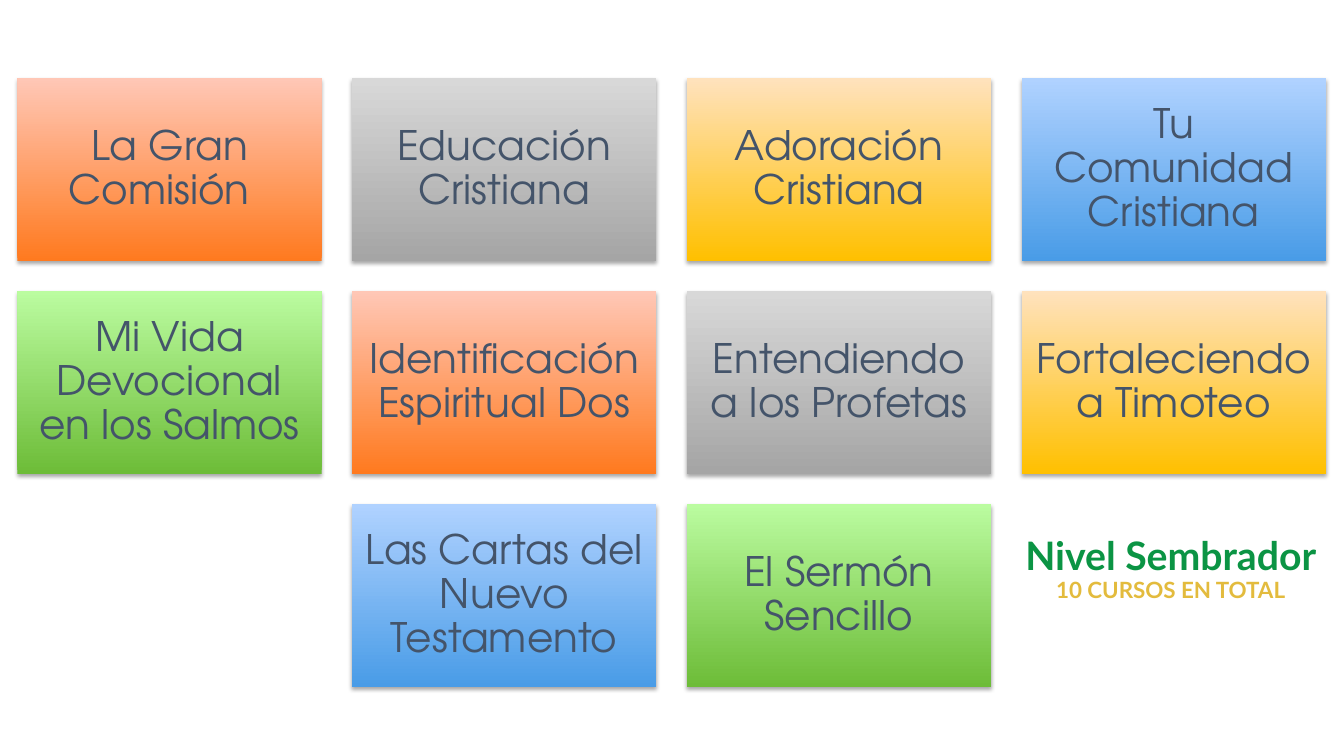
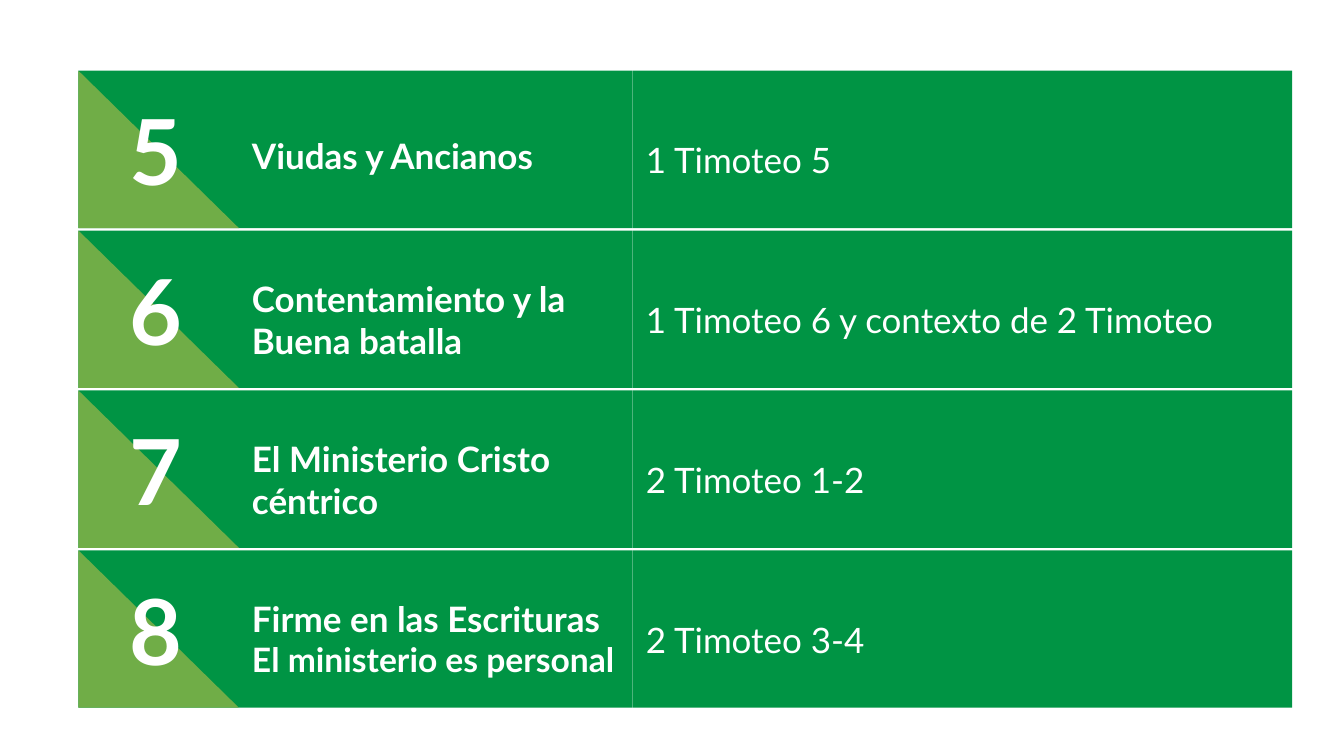
from pptx import Presentation
from pptx import util as u
from pptx.dml import color
from pptx.enum import shapes, text
from pptx.oxml import parse_xml
from pptx.oxml import ns

# Shared look
COLORS = {
    "white": "FFFFFF", "slate": "44546A", "band": "009444", "corner": "70AD47",
    "level": "0B9444", "count": "E3BB3D",
}
# Card gradients, from bottom to top
CARD_GRADIENTS = [
    ("FF7A1F", "FFC7B6"), ("A5A5A5", "D8D8D8"), ("FFC000", "FFE2BD"),
    ("499CE7", "B0D2FF"), ("6DBC38", "BBFCA0"),
]
BODY_FONT = "Lato"
CARD_FONT = "TeX Gyre Adventor"
TITLE_ONLY, BLANK = 5, 6
CENTER, LEFT = text.PP_ALIGN.CENTER, text.PP_ALIGN.LEFT
TOP, MIDDLE, BOTTOM = text.MSO_ANCHOR.TOP, text.MSO_ANCHOR.MIDDLE, text.MSO_ANCHOR.BOTTOM
RECTANGLE = shapes.MSO_SHAPE.RECTANGLE
TRIANGLE = shapes.MSO_SHAPE.RIGHT_TRIANGLE

# Course cards
CARD_LEFT, CARD_TOP = 12.4, 56
CARD_WIDTH, CARD_HEIGHT, CARD_GAP = 217.4, 130.4, 21.7
COURSE_ROWS = [
    (0, ["La Gran Comisión\t", "Educación Cristiana", "Adoración Cristiana",
         "Tu Comunidad Cristiana"]),
    (0, ["Mi Vida Devocional en los Salmos", "Identificación Espiritual Dos",
         "Entendiendo a los Profetas", "Fortaleciendo a Timoteo"]),
    (1, ["Las Cartas del Nuevo Testamento", "El Sermón Sencillo"]),
]

# Lesson bands
BAND_LEFT, BAND_TOP, BAND_HEIGHT, BAND_PITCH = 56, 50.5, 112.4, 114.2
TOPIC_WIDTH, READING_WIDTH, CORNER_WIDTH = 396, 471, 114.6
INSET = 9.4
# Number, topic lines with sizes, topic offset, reading
LESSONS = [
    ("5", [("Viudas y Ancianos", 25)], 36, "1 Timoteo 5"),
    ("6", [("Contentamiento y la Buena batalla", 25)], 24,
     "1 Timoteo 6 y contexto de 2 Timoteo"),
    ("7", [("El Ministerio Cristo céntrico", 25)], 24, "2 Timoteo 1-2"),
    ("8", [("Firme en las Escrituras", 25), ("El ministerio es personal", 24)], 24,
     "2 Timoteo 3-4"),
]


def rgb(value):
    return color.RGBColor.from_string(value)


def box(left, top, width, height):
    return [u.Pt(length) for length in (left, top, width, height)]


def style_font(font, name, size, color_name, bold=False):
    font.name, font.size, font.bold = name, u.Pt(size), bold
    font.color.rgb = rgb(COLORS[color_name])


def set_frame(shape, inset, anchor):
    frame = shape.text_frame
    frame.word_wrap = True
    frame.auto_size = text.MSO_AUTO_SIZE.NONE
    frame.vertical_anchor = anchor
    frame.margin_left = frame.margin_right = u.Pt(inset)
    frame.margin_top = frame.margin_bottom = u.Pt(inset)
    return frame


def write_lines(shape, lines, inset, anchor, align, font_name, color_name,
                bold=False, spacing=None):
    """Write (text, size) lines, one paragraph each."""
    frame = set_frame(shape, inset, anchor)
    frame.text = "\n".join(line for line, _ in lines)
    for paragraph, (_, size) in zip(frame.paragraphs, lines):
        paragraph.alignment = align
        paragraph.line_spacing = spacing
        for run in paragraph.runs:
            style_font(run.font, font_name, size, color_name, bold)
    return frame


def add_block(slide, kind, bounds, fill=None):
    shape = slide.shapes.add_shape(kind, *box(*bounds))
    shape.shadow.inherit = False
    shape.line.fill.background()
    if fill:
        shape.fill.solid()
        shape.fill.fore_color.rgb = rgb(COLORS[fill])
    return shape


def add_soft_shadow(shape):
    effects = shape._element.spPr.find(ns.qn("a:effectLst"))
    effects.append(parse_xml(
        f'<a:outerShdw {ns.nsdecls("a")} blurRad="{u.Pt(3.1)}" dist="{u.Pt(1.8)}" '
        'dir="5400000" rotWithShape="0"><a:srgbClr val="000000">'
        '<a:alpha val="35000"/></a:srgbClr></a:outerShdw>'))


def add_card(slide, course, row, column, gradient):
    left = CARD_LEFT + column * (CARD_WIDTH + CARD_GAP)
    top = CARD_TOP + row * (CARD_HEIGHT + CARD_GAP)
    card = add_block(slide, RECTANGLE, (left, top, CARD_WIDTH, CARD_HEIGHT))
    card.fill.gradient()
    card.fill.gradient_angle = 90
    for stop, value in zip(card.fill.gradient_stops, gradient):
        stop.color.rgb = rgb(value)
    add_soft_shadow(card)
    write_lines(card, [(course, 29)], 8.7, MIDDLE, CENTER, CARD_FONT, "slate", spacing=0.9)


def add_level_title(slide):
    title = slide.shapes.title
    title.left, title.top, title.width, title.height = box(728.6, 356.4, 215.3, 101.5)
    frame = set_frame(title, 1.4, MIDDLE)
    frame.text = "Nivel Sembrador\v10 CURSOS EN TOTAL"
    paragraph = frame.paragraphs[0]
    paragraph.alignment = CENTER
    paragraph.line_spacing = 0.9
    for run, size, color_name in zip(paragraph.runs, (28, 16), ("level", "count")):
        style_font(run.font, BODY_FONT, size, color_name, bold=True)


def add_lesson(slide, top, number, topic, topic_offset, reading):
    # Band halves and corner
    topic_left = BAND_LEFT + CORNER_WIDTH
    reading_left = BAND_LEFT + TOPIC_WIDTH
    reading_band = add_block(
        slide, RECTANGLE, (reading_left, top, READING_WIDTH, BAND_HEIGHT), "band")
    add_block(slide, RECTANGLE, (BAND_LEFT, top, TOPIC_WIDTH, BAND_HEIGHT), "band")
    add_block(slide, TRIANGLE, (BAND_LEFT, top, CORNER_WIDTH, BAND_HEIGHT), "corner")

    # Reading, number and topic
    frame = write_lines(reading_band, [(reading, 25)], INSET, TOP, LEFT, BODY_FONT,
                        "white", spacing=1.15)
    frame.margin_top = u.Pt(44)
    number_box = slide.shapes.add_textbox(*box(76.3, top + 36, 70.6, 68.4))
    write_lines(number_box, [(number, 65)], INSET, BOTTOM, CENTER, BODY_FONT, "white", True)
    topic_box = slide.shapes.add_textbox(
        *box(topic_left, top + topic_offset, reading_left - topic_left, 68.4))
    write_lines(topic_box, topic, INSET, TOP, LEFT, BODY_FONT, "white", True)


def main():
    presentation = Presentation()
    presentation.slide_width, presentation.slide_height = u.Pt(960), u.Pt(540)

    # Courses of the level
    slide = presentation.slides.add_slide(presentation.slide_layouts[TITLE_ONLY])
    add_level_title(slide)
    count = 0
    for row, (first_column, courses) in enumerate(COURSE_ROWS):
        for column, course in enumerate(courses, first_column):
            add_card(slide, course, row, column, CARD_GRADIENTS[count % len(CARD_GRADIENTS)])
            count += 1

    # Lessons and readings
    slide = presentation.slides.add_slide(presentation.slide_layouts[BLANK])
    for index, lesson in enumerate(LESSONS):
        add_lesson(slide, BAND_TOP + index * BAND_PITCH, *lesson)

    presentation.save("out.pptx")


if __name__ == "__main__":
    main()
